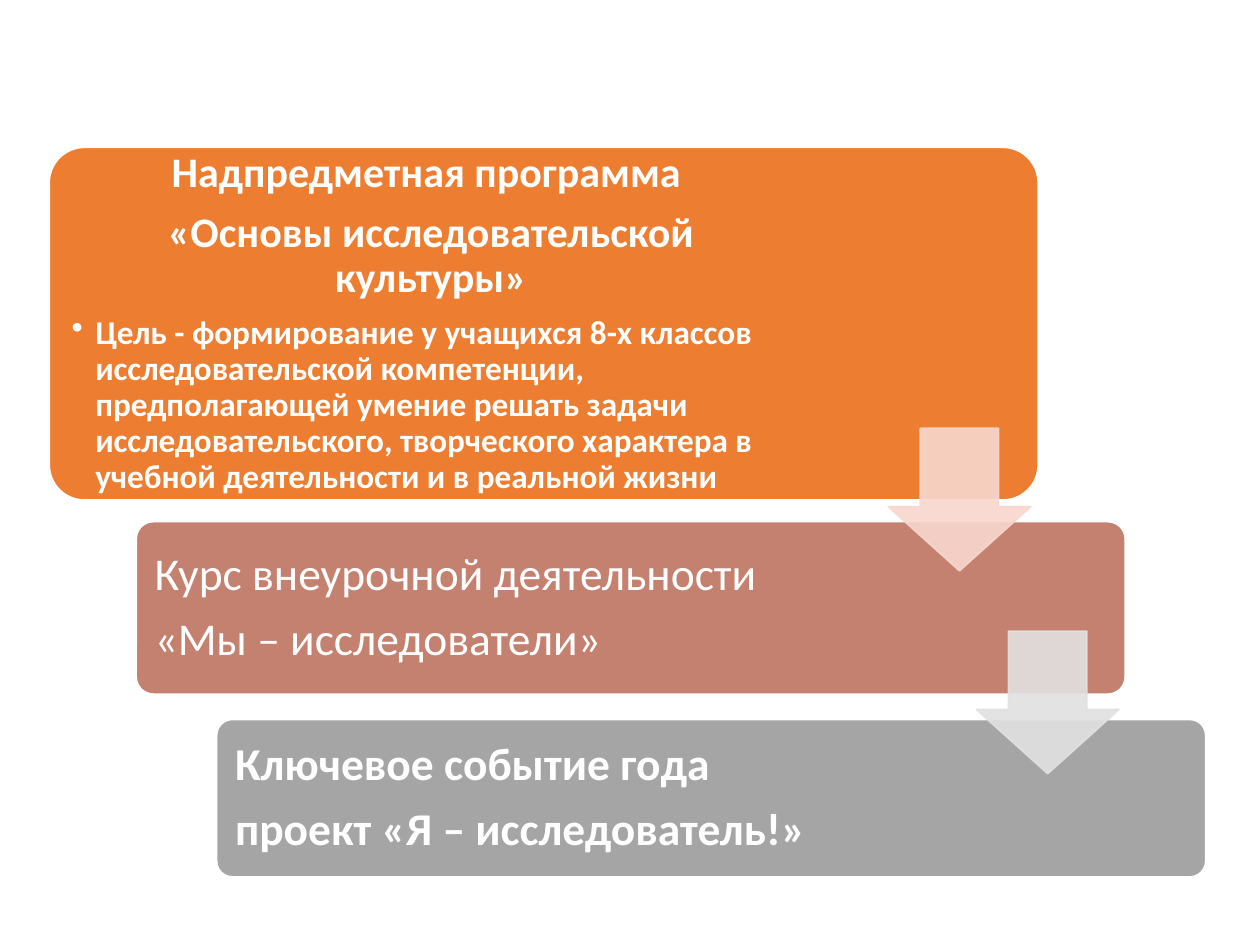
from lxml.etree import SubElement
from pptx import Presentation
from pptx.dml.color import RGBColor
from pptx.enum.shapes import MSO_SHAPE
from pptx.enum.text import MSO_ANCHOR, PP_ALIGN
from pptx.oxml.ns import qn
from pptx.util import Pt

CARD_WIDTH = 565.2
ARROW_SIZE = 81.4
WHITE = "FFFFFF"


def set_color(color_format, value):
    color_format.rgb = RGBColor.from_string(value)


def set_opacity(fill_parent, percent):
    color = fill_parent.find(qn("a:solidFill"))[0]
    SubElement(color, qn("a:alpha"), val=str(percent * 1000))


def add_box(slide, kind, left, top, width, height, fill, line, adjustments):
    shape = slide.shapes.add_shape(kind, Pt(left), Pt(top), Pt(width), Pt(height))
    shape.shadow.inherit = False
    for index, value in enumerate(adjustments):
        shape.adjustments[index] = value
    shape.fill.solid()
    set_color(shape.fill.fore_color, fill)
    shape.line.width = Pt(1)
    set_color(shape.line.color, line)
    return shape


def add_card(slide, left, top, height, fill):
    add_box(slide, MSO_SHAPE.ROUNDED_RECTANGLE, left, top, CARD_WIDTH, height,
            fill, WHITE, [0.1])


def add_arrow(slide, left, top, color):
    shape = add_box(slide, MSO_SHAPE.DOWN_ARROW, left, top, ARROW_SIZE, ARROW_SIZE,
                    color, color, [0.55, 0.45])
    properties = shape.fill._xPr
    set_opacity(properties, 90)
    set_opacity(properties.find(qn("a:ln")), 90)


def add_text_frame(slide, left, top, width, height, inset):
    box = slide.shapes.add_textbox(Pt(left), Pt(top), Pt(width), Pt(height))
    frame = box.text_frame
    frame.word_wrap = True
    frame.vertical_anchor = MSO_ANCHOR.MIDDLE
    frame.margin_left = frame.margin_right = Pt(inset)
    frame.margin_top = frame.margin_bottom = Pt(inset)
    return frame


def add_paragraph(frame, text, size, bold, space_after, align=PP_ALIGN.LEFT, bullet=False):
    first = frame.paragraphs[0]
    paragraph = frame.add_paragraph() if first.runs else first
    paragraph.alignment = align
    paragraph.line_spacing = 0.9
    paragraph.space_after = Pt(space_after)
    if bullet:
        paragraph.level = 1
        properties = paragraph._p.get_or_add_pPr()
        properties.set("marL", str(Pt(13.5)))
        properties.set("indent", str(Pt(-13.5)))
        SubElement(properties, qn("a:buChar"), char="•")
    run = paragraph.add_run()
    run.text = text
    run.font.name = "Calibri"
    run.font.size = Pt(size)
    run.font.bold = bold
    set_color(run.font.color, WHITE)


def add_program(slide):
    add_card(slide, 28.1, 84.2, 201.6, "ED7D31")
    frame = add_text_frame(slide, 33.9, 90, 424.8, 189.4, 7.2)
    for text in ("Надпредметная программа ", "«Основы исследовательской культуры»"):
        add_paragraph(frame, text, 24, True, 8.4, PP_ALIGN.CENTER)
    goal = ("Цель - формирование у учащихся 8-х классов исследовательской компетенции, "
            "предполагающей умение решать задачи исследовательского, творческого "
            "характера в учебной деятельности и в реальной жизни")
    add_paragraph(frame, goal, 19, True, 2.85, bullet=True)


def add_step(slide, left, top, height, fill, lines, bold):
    add_card(slide, left, top, height, fill)
    frame = add_text_frame(slide, left + 2.7, top + 2.9, 428, height - 5.8, 7.8)
    for text in lines:
        add_paragraph(frame, text, 26, bold, 9.1)


def main():
    presentation = Presentation()
    presentation.slide_width = Pt(720)
    presentation.slide_height = Pt(540)
    slide = presentation.slides.add_slide(presentation.slide_layouts[6])
    add_program(slide)
    add_step(slide, 77.8, 298.1, 98.6, "C48170",
             ["Курс внеурочной деятельности", "«Мы – исследователи»"], False)
    add_step(slide, 123.8, 411.1, 90, "A5A5A5",
             ["Ключевое событие года", "проект «Я – исследователь!»"], True)
    add_arrow(slide, 507.6, 244.8, "F8D7CE")
    add_arrow(slide, 558, 360.7, "E1E1E1")
    presentation.save("out.pptx")


if __name__ == "__main__":
    main()
